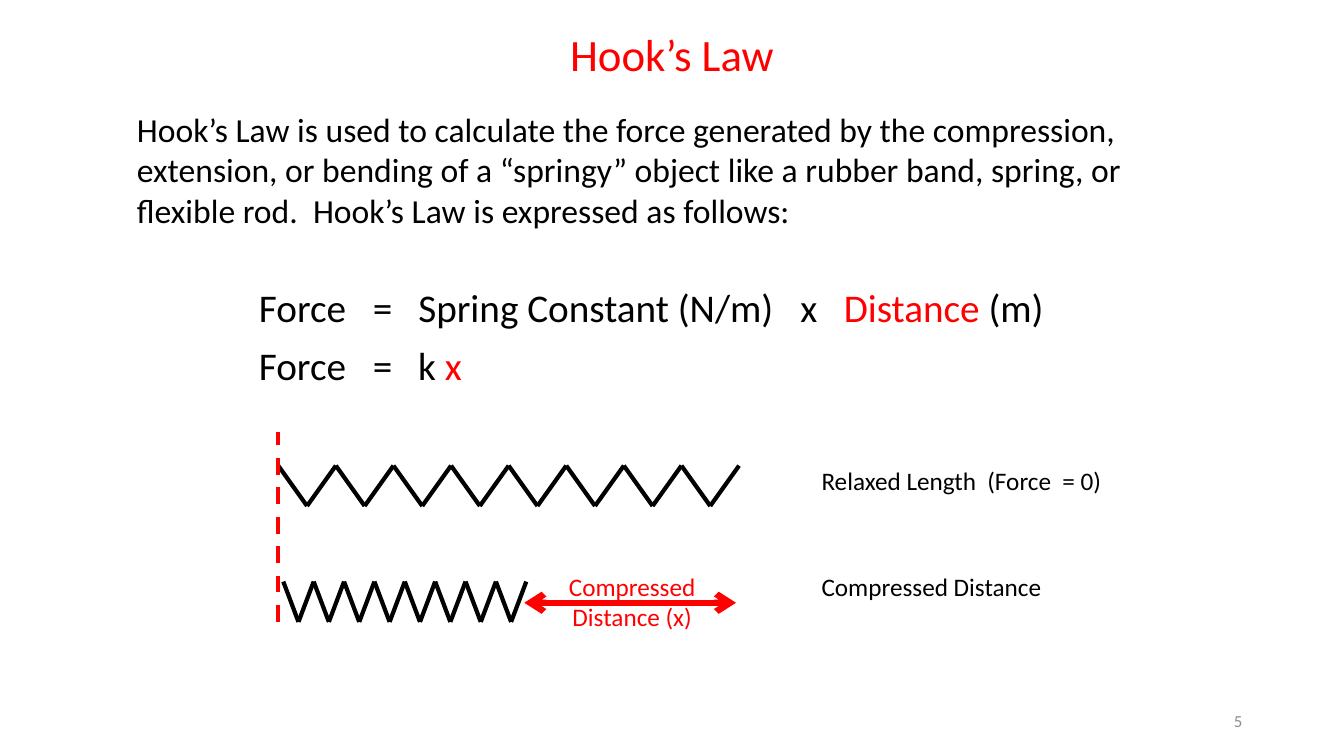
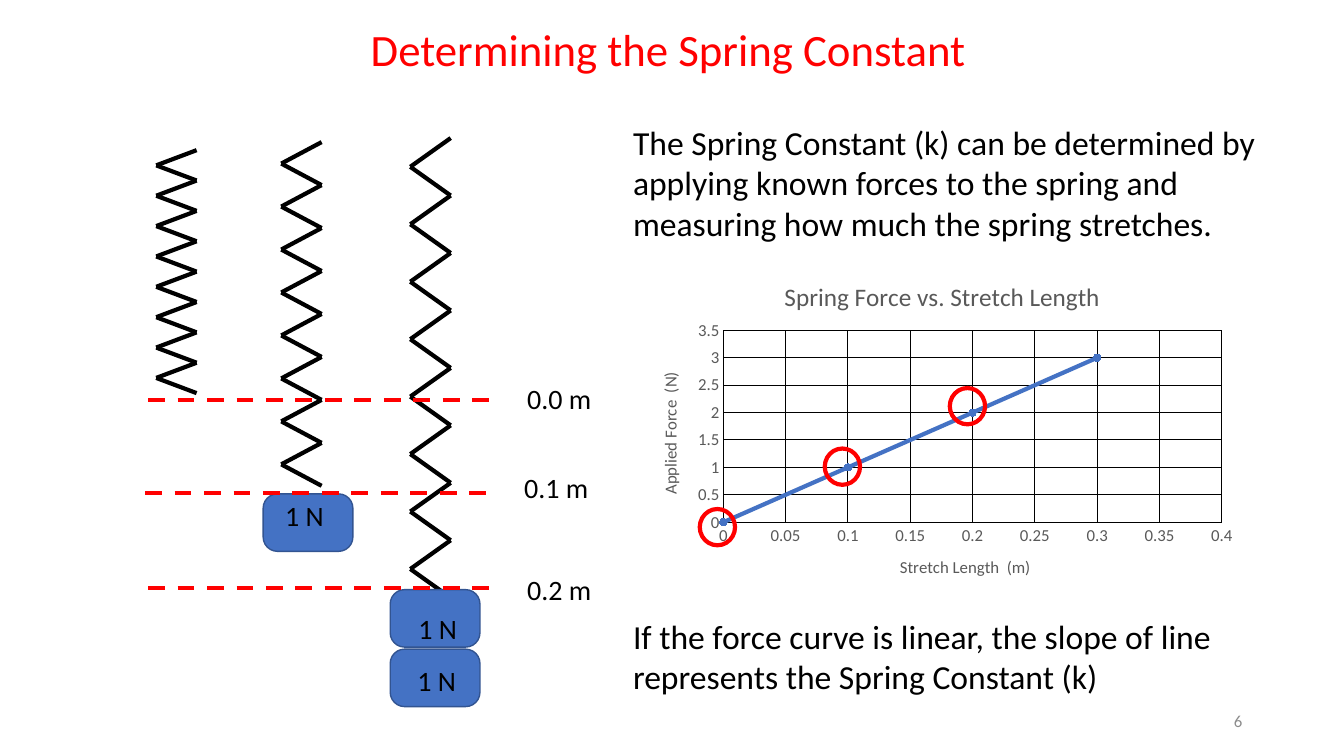
from dataclasses import dataclass

from lxml.etree import SubElement
from pptx import Presentation
from pptx.chart.data import XyChartData
from pptx.dml.color import RGBColor
from pptx.enum.chart import XL_CHART_TYPE, XL_MARKER_STYLE, XL_TICK_MARK
from pptx.enum.dml import MSO_LINE
from pptx.enum.shapes import MSO_CONNECTOR, MSO_SHAPE
from pptx.enum.text import MSO_ANCHOR, MSO_AUTO_SIZE, PP_ALIGN
from pptx.oxml import parse_xml
from pptx.oxml.ns import nsdecls, qn
from pptx.util import Inches, Pt


@dataclass(frozen=True)
class Theme:
    font: str = "Calibri"
    ink: RGBColor = RGBColor(0x00, 0x00, 0x00)
    accent: RGBColor = RGBColor(0xFF, 0x00, 0x00)
    blue: RGBColor = RGBColor(0x44, 0x72, 0xC4)
    blue_edge: RGBColor = RGBColor(0x32, 0x54, 0x91)
    chart_text: RGBColor = RGBColor(0x59, 0x59, 0x59)
    footer: RGBColor = RGBColor(0x8C, 0x8C, 0x8C)
    title_size: int = 32
    formula_size: int = 28
    body_size: int = 24
    mark_size: int = 20
    label_size: int = 18
    small_size: int = 12
    stroke: float = 3


THEME = Theme()


# Text
def style_font(font, size, color):
    font.name = THEME.font
    font.size = Pt(size)
    font.color.rgb = color


def add_text(page, place, spans, size=THEME.body_size, color=THEME.ink,
             align=PP_ALIGN.LEFT):
    """Spans is a string, or a list of (text, color) pairs."""
    box = page.shapes.add_textbox(*map(Inches, place))
    frame = box.text_frame
    frame.word_wrap = True
    frame.auto_size = MSO_AUTO_SIZE.SHAPE_TO_FIT_TEXT
    para = frame.paragraphs[0]
    para.alignment = align
    style_font(para.font, size, color)
    if isinstance(spans, str):
        spans = [(spans, color)]
    for text, span_color in spans:
        span = para.add_run()
        span.text = text
        if span_color != color:
            span.font.color.rgb = span_color
    return box


def add_formula(page, place, spans, stops):
    box = add_text(page, place, spans, THEME.formula_size)
    properties = box.text_frame.paragraphs[0].font._element.getparent()
    tabs = parse_xml(f"<a:tabLst {nsdecls('a')}/>")
    for stop in stops:
        SubElement(tabs, qn("a:tab"), pos=str(Inches(stop)), algn="l")
    properties.insert(0, tabs)


def add_page(deck, title, title_place, number):
    page = deck.slides.add_slide(deck.slide_layouts[6])
    add_text(page, title_place, title, THEME.title_size, THEME.accent,
             PP_ALIGN.CENTER)
    footer = add_text(page, (9.42, 6.95, 3, 0.4), str(number),
                      THEME.small_size, THEME.footer, PP_ALIGN.RIGHT)
    footer.text_frame.auto_size = MSO_AUTO_SIZE.NONE
    footer.text_frame.vertical_anchor = MSO_ANCHOR.MIDDLE
    return page


# Lines and springs
def add_line(parent, start, end, color=THEME.ink, width=THEME.stroke,
             dashed=False, arrows=False):
    line = parent.shapes.add_connector(
        MSO_CONNECTOR.STRAIGHT, *map(Inches, (*start, *end)))
    line.line.color.rgb = color
    line.line.width = Pt(width)
    if dashed:
        line.line.dash_style = MSO_LINE.DASH
    if arrows:
        outline = line.line._get_or_add_ln()
        for tag in ("a:headEnd", "a:tailEnd"):
            SubElement(outline, qn(tag), type="arrow")
    SubElement(line._element.spPr, qn("a:effectLst"))


def add_spring(page, left, top, length, swing, vertical=False, strokes=16):
    group = page.shapes.add_group_shape()
    points = []
    for index in range(strokes + 1):
        along, across = length * index / strokes, swing * (index % 2)
        points.append((left + across, top + along) if vertical
                      else (left + along, top + across))
    for start, end in zip(points, points[1:]):
        add_line(group, start, end)


# Weights and rings
def add_weight(page, left, top):
    block = page.shapes.add_shape(
        MSO_SHAPE.ROUNDED_RECTANGLE, *map(Inches, (left, top, 0.89, 0.57)))
    block.shadow.inherit = False
    block.adjustments[0] = 0.25
    block.fill.solid()
    block.fill.fore_color.rgb = THEME.blue
    block.line.color.rgb = THEME.blue_edge
    block.line.width = Pt(1)


def add_ring(page, left, top):
    ring = page.shapes.add_shape(
        MSO_SHAPE.OVAL, *map(Inches, (left, top, 0.35, 0.36)))
    ring.shadow.inherit = False
    ring.fill.background()
    ring.line.color.rgb = THEME.accent
    ring.line.width = Pt(THEME.stroke)


# Chart
def set_chart_title(owner, text, size):
    owner.has_title = True
    title = owner.chart_title if hasattr(owner, "chart_title") else owner.axis_title
    title.text_frame.text = text
    para = title.text_frame.paragraphs[0]
    style_font(para.font, size, THEME.chart_text)
    para.font.bold = False


def style_axis(axis, title):
    axis.has_major_gridlines = True
    axis.major_tick_mark = axis.minor_tick_mark = XL_TICK_MARK.NONE
    for line in (axis.format.line, axis.major_gridlines.format.line):
        line.color.rgb = THEME.ink
        line.width = Pt(0.75)
    labels = axis.tick_labels
    labels.number_format = "General"
    labels.number_format_is_linked = False
    style_font(labels.font, THEME.small_size, THEME.chart_text)
    set_chart_title(axis, title, THEME.small_size)


def fix_plot_area(chart, **fractions):
    """Pin the inner plot area, so that the rings meet the points."""
    plot_area = chart._chartSpace.chart.plotArea
    for old in plot_area.findall(qn("c:layout")):
        plot_area.remove(old)
    layout = parse_xml(f"<c:layout {nsdecls('c')}/>")
    manual = SubElement(layout, qn("c:manualLayout"))
    settings = {"layoutTarget": "inner", "xMode": "edge", "yMode": "edge",
                **fractions}
    for name, value in settings.items():
        SubElement(manual, qn(f"c:{name}"), val=str(value))
    plot_area.insert(0, layout)


def add_force_chart(page, place):
    data = XyChartData()
    points = data.add_series("Series 1")
    for stretch, force in zip((0, 0.1, 0.2, 0.3), (0, 1, 2, 3)):
        points.add_data_point(stretch, force)
    chart = page.shapes.add_chart(
        XL_CHART_TYPE.XY_SCATTER_LINES, *map(Inches, place), data).chart
    style_font(chart.font, 10, THEME.ink)
    chart.has_legend = False
    set_chart_title(chart, "Spring Force vs. Stretch Length", THEME.label_size)
    style_axis(chart.category_axis, "Stretch Length  (m)")
    style_axis(chart.value_axis, "Applied Force  (N)")
    chart.category_axis.maximum_scale = 0.4
    chart.plots[0].vary_by_categories = False

    series = chart.plots[0].series[0]
    series.smooth = False
    series.format.line.color.rgb = THEME.blue
    series.format.line.width = Pt(THEME.stroke)
    series.marker.style = XL_MARKER_STYLE.CIRCLE
    series.marker.size = 5
    series.marker.format.fill.solid()
    series.marker.format.fill.fore_color.rgb = THEME.blue
    series.marker.format.line.color.rgb = THEME.blue
    fix_plot_area(chart, x=0.14, y=0.2, w=0.82, h=0.57)


# Slides
def build_law_page(deck):
    page = add_page(deck, "Hook’s Law", (3.62, 0.22, 6.09, 0.64), 5)
    add_text(page, (1.26, 1.03, 10.83, 1.31),
             "Hook’s Law is used to calculate the force generated by the "
             "compression, extension, or bending of a “springy” object like a "
             "rubber band, spring, or flexible rod.  Hook’s Law is expressed "
             "as follows:")
    stops = (1.13, 1.58, 5.37, 5.8)
    add_formula(page, (2.47, 2.76, 8.29, 0.57),
                [("Force\t=\tSpring Constant (N/m)\tx\t", THEME.ink),
                 ("Distance", THEME.accent), (" (m)", THEME.ink)], stops)
    add_formula(page, (2.47, 3.34, 3, 0.57),
                [("Force\t=\tk ", THEME.ink), ("x", THEME.accent)], stops)

    # Relaxed spring above, compressed spring below
    add_spring(page, 2.76, 4.62, 4.57, 0.4)
    add_spring(page, 2.81, 5.77, 2.41, 0.4)
    for top, label in ((4.57, "Relaxed Length  (Force  = 0)"),
                       (5.62, "Compressed Distance")):
        add_text(page, (8.05, top, 3.5, 0.4), label, THEME.label_size)
    add_line(page, (5.2, 5.98), (7.3, 5.98), THEME.accent, 4.5, arrows=True)
    add_text(page, (5.53, 5.62, 1.48, 0.71), "Compressed Distance (x)",
             THEME.label_size, THEME.accent, PP_ALIGN.CENTER)
    add_line(page, (2.76, 6.17), (2.76, 4.29), THEME.accent, dashed=True)


def build_constant_page(deck):
    page = add_page(deck, "Determining the Spring Constant",
                    (3.36, 0.17, 6.54, 0.64), 6)
    add_force_chart(page, (6.33, 2.61, 6.03, 3.34))
    add_text(page, (6.18, 1.16, 6.38, 1.31),
             "The Spring Constant (k) can be determined by applying known "
             "forces to the spring and measuring how much the spring stretches.")
    add_text(page, (6.18, 6.06, 6.38, 0.91),
             "If the force curve is linear, the slope of line represents the "
             "Spring Constant (k)")

    # Springs under growing load
    for left, top, length in ((1.95, 1.49, 2.41), (3.19, 1.41, 3.41),
                              (4.47, 1.37, 4.56)):
        add_spring(page, left, top, length, -0.4, vertical=True)
    for left, top in ((2.61, 4.9), (3.87, 5.85), (3.87, 6.44)):
        add_weight(page, left, top)
    for left, top in ((2.73, 4.9), (4.05, 6.02), (4.04, 6.53)):
        add_text(page, (left, top, 0.65, 0.44), "1 N", THEME.mark_size)

    # Stretch marks
    for left, level, label_top, label in ((1.47, 3.97, 3.74, "0.0 m"),
                                          (1.44, 4.89, 4.62, "0.1 m"),
                                          (1.47, 5.83, 5.63, "0.2 m")):
        add_line(page, (left, level), (left + 3.48, level), THEME.accent,
                 dashed=True)
        add_text(page, (left + 3.66, label_top, 1.06, 0.44), label,
                 THEME.mark_size)

    # Rings on the measured points, evenly spaced along the line
    for index in range(3):
        add_ring(page, 6.94 + 1.24 * index, 5.05 - 0.6 * index)


def main():
    deck = Presentation()
    deck.slide_width, deck.slide_height = Inches(13.33), Inches(7.5)
    build_law_page(deck)
    build_constant_page(deck)
    deck.save("out.pptx")


if __name__ == "__main__":
    main()
